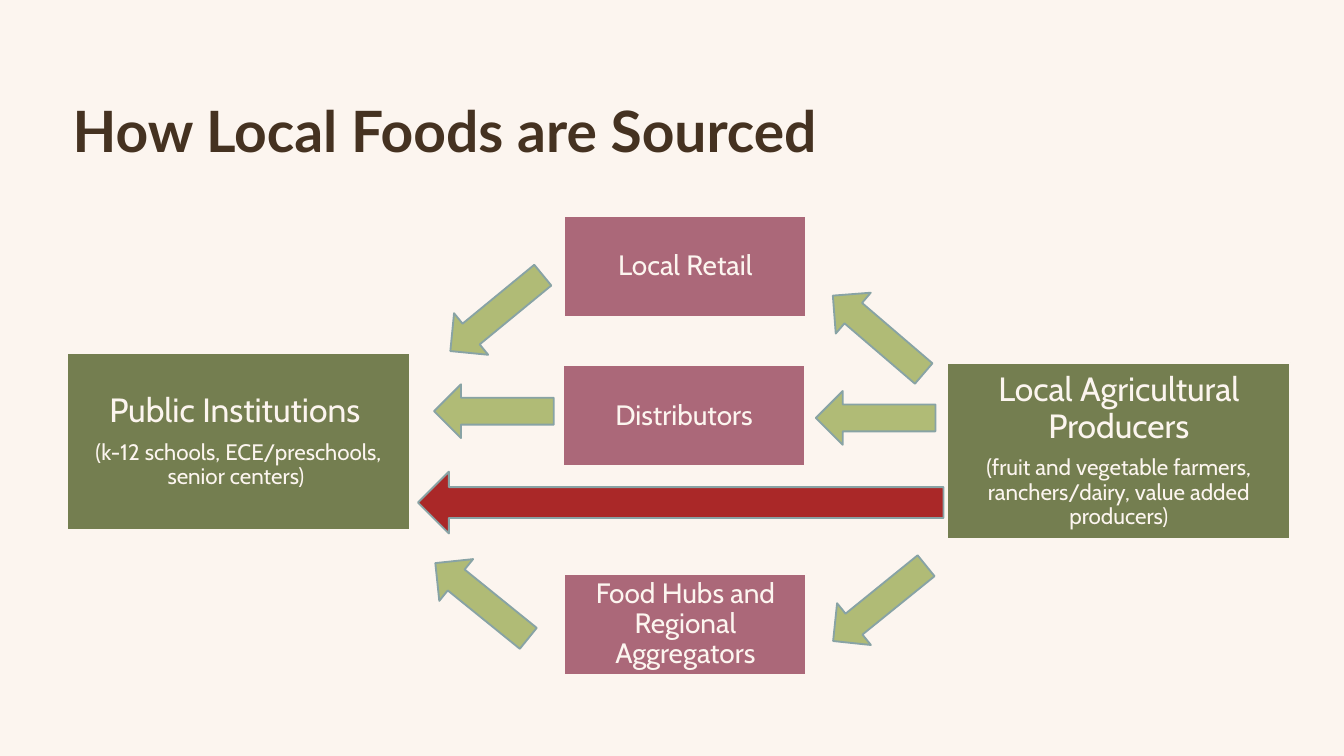
from pptx import Presentation
from pptx.dml.color import RGBColor
from pptx.enum import shapes, text
from pptx.util import Inches, Pt

HUE = {"cream": "FCF5EF", "brown": "453221", "olive": "747E50", "rose": "AB6879",
       "leaf": "B0BB76", "red": "AA2828", "edge": "88A3A5"}
TITLE = "How Local Foods are Sourced"
ENDS = [
    (0.5, 2.63, "Public Institutions ", "(k-12 schools, ECE/preschools, senior centers) "),
    (7.05, 2.7, "Local Agricultural Producers",
     "(fruit and vegetable farmers, ranchers/dairy, value added producers)"),
]
ROUTES = [
    (4.2, 1.61, "Local Retail"),
    (4.2, 4.27, "Food Hubs and Regional Aggregators"),
    (4.19, 2.72, "Distributors"),
]
STEPS = [
    (6.09, 2.29, 40.6), (6.07, 2.91, 0), (6.1, 4.29, 321),
    (3.25, 2.13, 320.6), (3.23, 2.86, 0), (3.14, 4.27, 39),
]
DIRECT = (3.11, 3.51, 3.91, 0.46)
END_SIZE, ROUTE_SIZE, STEP_SIZE = (2.55, 1.31), (1.8, 0.75), (0.89, 0.4)


def tint(name):
    return RGBColor.from_string(HUE[name])


def write(shape, lines, font="Cabin", color="cream", bold=False, align="CENTER",
          pad=(0.01, 0.01, 0.01, 0.01), space=0.9):
    frame = shape.text_frame
    frame.word_wrap = True
    frame.auto_size = text.MSO_AUTO_SIZE.NONE
    frame.vertical_anchor = text.MSO_ANCHOR.MIDDLE
    (frame.margin_left, frame.margin_top,
     frame.margin_right, frame.margin_bottom) = map(Inches, pad)
    for i, (words, size) in enumerate(lines):
        para = frame.add_paragraph() if i else frame.paragraphs[0]
        para.alignment = text.PP_ALIGN[align]
        para.line_spacing = space
        para.space_before = Pt(6 if i else 0)
        run = para.add_run()
        run.text = words
        run.font.name, run.font.size, run.font.bold = font, Pt(size), bold
        run.font.color.rgb = tint(color)


def draw(slide, kind, place, fill, line):
    shape = slide.shapes.add_shape(kind, *map(Inches, place))
    shape.shadow.inherit = False
    shape.fill.solid()
    shape.fill.fore_color.rgb = tint(fill)
    shape.line.color.rgb = tint(line)
    shape.line.width = Pt(1)
    return shape


def main():
    deck = Presentation()
    deck.slide_width = Inches(10)
    deck.slide_height = deck.slide_width * 9 // 16
    slide = deck.slides.add_slide(deck.slide_layouts[5])
    slide.background.fill.solid()
    slide.background.fill.fore_color.rgb = tint("cream")

    title = slide.shapes.title
    title.left, title.top, title.width, title.height = map(Inches, (0.54, 0.65, 6.9, 0.63))
    write(title, [(TITLE, 30.5)], font="Lato", color="brown", bold=True,
          align="LEFT", pad=(0, 0.04, 0.07, 0.04), space=1.0)

    box, arrow = shapes.MSO_SHAPE.RECTANGLE, shapes.MSO_SHAPE.LEFT_ARROW
    for x, y, name, note in ENDS:
        card = draw(slide, box, (x, y, *END_SIZE), "olive", "cream")
        write(card, [(name, 18), (note, 12)])
    for x, y, name in ROUTES:
        card = draw(slide, box, (x, y, *ROUTE_SIZE), "rose", "cream")
        write(card, [(name, 15)])
    for x, y, turn in STEPS:
        draw(slide, arrow, (x, y, *STEP_SIZE), "leaf", "edge").rotation = turn
    draw(slide, arrow, DIRECT, "red", "edge")

    deck.save("out.pptx")


if __name__ == "__main__":
    main()
